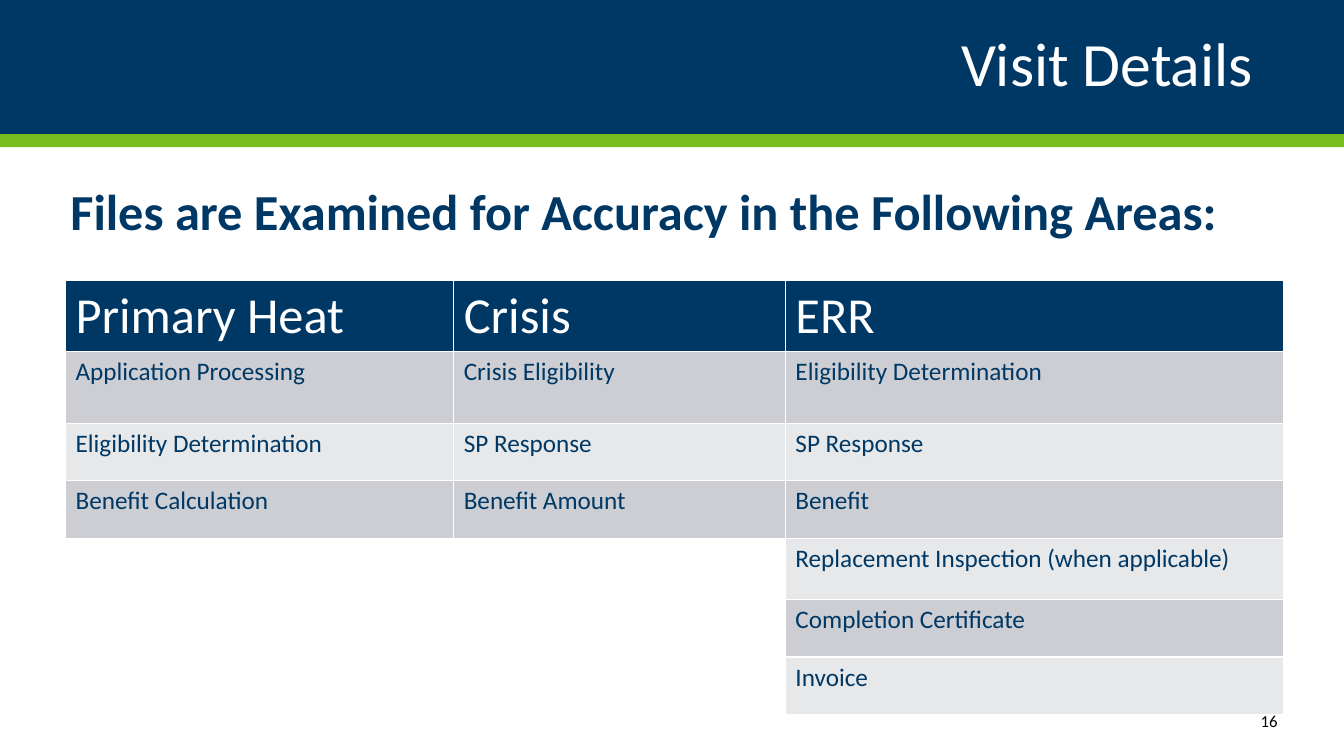
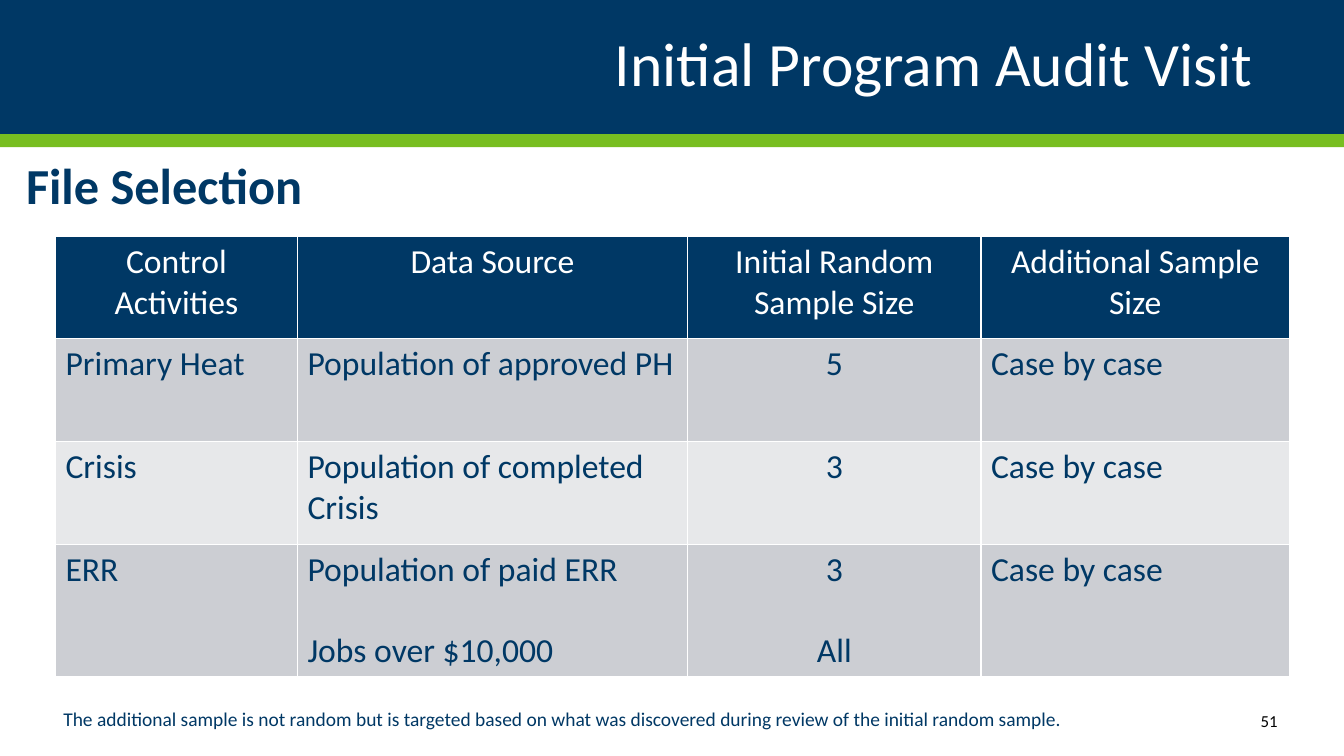
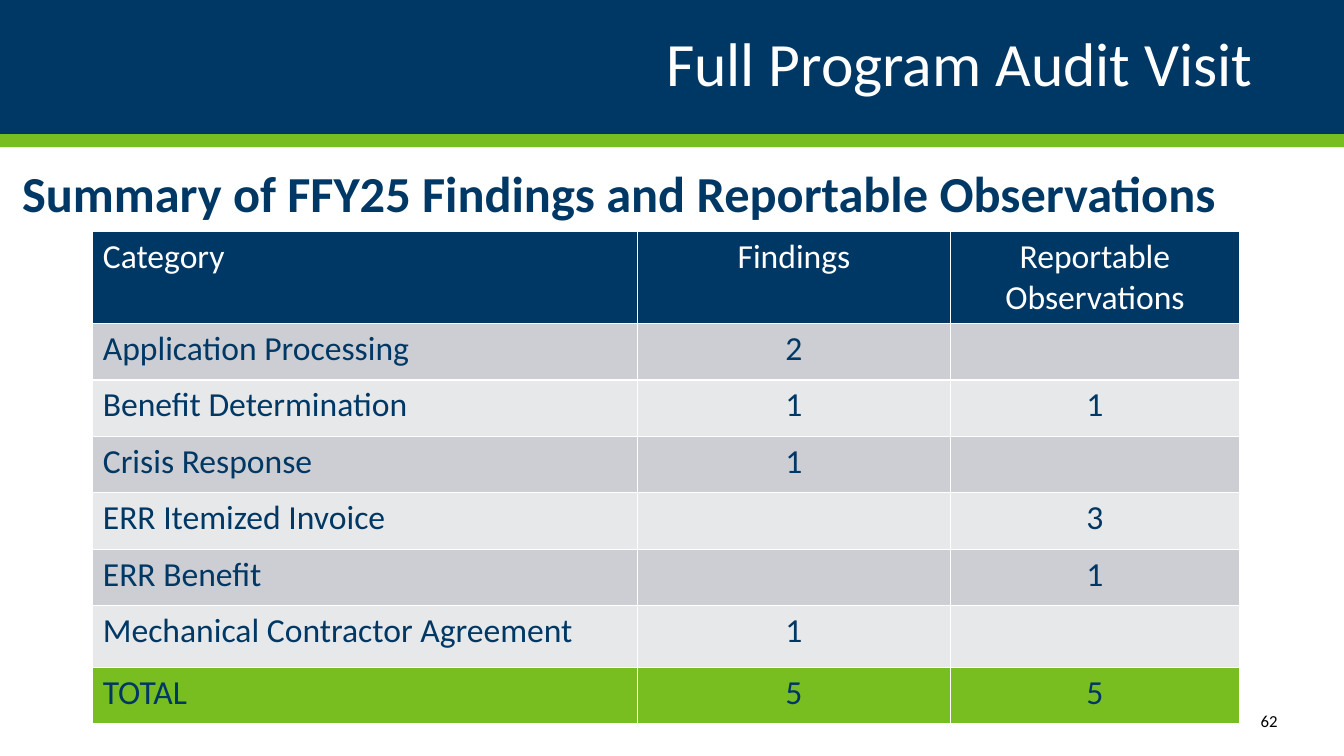
"""Build three audit-visit slides that share a title band, a heading, a page number and a table style."""
from dataclasses import dataclass
from typing import Optional

from lxml import etree
from pptx import Presentation
from pptx.dml.color import RGBColor
from pptx.enum import shapes, text
from pptx.oxml import ns
from pptx.util import Emu, Inches, Pt

Row = tuple[Optional[str], ...]


@dataclass(frozen=True)
class Theme:
    font: str = "Calibri"
    navy: str = "003865"
    green: str = "78BE21"
    white: str = "FFFFFF"
    black: str = "000000"
    bands: tuple[str, str] = ("CCCED3", "E7E8EA")
    title_size: int = 44
    heading_size: int = 36
    table_size: int = 24
    small_table_size: int = 18
    page_size: int = 12
    border: float = 1


THEME = Theme()
ALIGN = {"l": text.PP_ALIGN.LEFT, "c": text.PP_ALIGN.CENTER, "r": text.PP_ALIGN.RIGHT}


@dataclass(frozen=True)
class Area:
    left: float
    top: float
    width: float
    height: float

    def lengths(self) -> tuple[Emu, ...]:
        return tuple(Inches(v) for v in (self.left, self.top, self.width, self.height))


@dataclass(frozen=True)
class Grid:
    left: float
    top: float
    widths: tuple[float, ...]
    heights: tuple[float, ...]
    rows: tuple[Row, ...]
    header_align: str
    body_align: str
    header_size: int = THEME.table_size
    body_size: int = THEME.table_size
    has_total: bool = False

    def area(self) -> Area:
        return Area(self.left, self.top, sum(self.widths), sum(self.heights))


@dataclass(frozen=True)
class Page:
    title: str
    heading: str
    heading_area: Area
    number: int
    grid: Grid
    footnote: str = ""


TITLE_AREA = Area(0, 0, 13.33, 1.33)
STRIPE_AREA = Area(0, 1.33, 13.33, 0.13)
NUMBER_AREA = Area(11.17, 6.95, 1.6, 0.4)
FOOTNOTE_AREA = Area(0.53, 6.93, 11.86, 0.67)

PAGES = (
    Page(
        "Visit Details",
        "Files are Examined for Accuracy in the Following Areas:",
        Area(0.6, 1.74, 11.85, 5.01),
        16,
        Grid(
            0.65, 2.78, (3.85, 3.29, 4.94),
            (0.71, 0.71, 0.57, 0.57, 0.61, 0.57, 0.57),
            (
                ("Primary Heat", "Crisis", "ERR"),
                ("Application Processing", "Crisis Eligibility", "Eligibility Determination"),
                ("Eligibility Determination", "SP Response", "SP Response"),
                ("Benefit Calculation", "Benefit Amount", "Benefit"),
                (None, None, "Replacement Inspection (when applicable)"),
                (None, None, "Completion Certificate"),
                (None, None, "Invoice"),
            ),
            "lll", "lll", THEME.heading_size, THEME.small_table_size,
        ),
    ),
    Page(
        "Initial Program Audit Visit",
        "File Selection",
        Area(0.16, 1.48, 13.02, 5.28),
        51,
        Grid(
            0.55, 2.35, (2.4, 3.87, 2.91, 3.06), (1.01, 1.02, 1.02, 1.31),
            (
                ("Control Activities", "Data Source", "Initial Random Sample Size",
                 "Additional Sample Size"),
                ("Primary Heat", "Population of approved PH", "5", "Case by case"),
                ("Crisis", "Population of completed Crisis", "3", "Case by case"),
                ("ERR", "Population of paid ERR\nJobs over $10,000", "3\nAll", "Case by case"),
            ),
            "cccc", "llcl",
        ),
        "The additional sample is not random but is targeted based on what was "
        "discovered during review of the initial random sample.",
    ),
    Page(
        "Full Program Audit Visit",
        "Summary of FFY25 Findings and Reportable Observations",
        Area(0.12, 1.56, 13.11, 5.39),
        62,
        Grid(
            0.92, 2.3, (5.4, 3.11, 2.86),
            (0.91, 0.56, 0.56, 0.56, 0.56, 0.56, 0.61, 0.56),
            (
                ("Category", "Findings", "Reportable Observations"),
                ("Application Processing", "2", ""),
                ("Benefit Determination", "1", "1"),
                ("Crisis Response", "1", ""),
                ("ERR Itemized Invoice", "", "3"),
                ("ERR Benefit", "", "1"),
                ("Mechanical Contractor Agreement", "1", ""),
                ("TOTAL", "5", "5"),
            ),
            "lcc", "lcc", has_total=True,
        ),
    ),
)


def set_fill(item, colour: str) -> None:
    item.fill.solid()
    item.fill.fore_color.rgb = RGBColor.from_string(colour)


def write(frame, words: str, size: int, colour: str, align: str = "l", bold: bool = False) -> None:
    frame.text = words
    for para in frame.paragraphs:
        para.alignment = ALIGN[align]
        for span in para.runs:
            span.font.name = THEME.font
            span.font.size = Pt(size)
            span.font.bold = bold
            span.font.color.rgb = RGBColor.from_string(colour)


def add_text(slide, area: Area, words: str, size: int, colour: str,
             align: str = "l", bold: bool = False):
    box = slide.shapes.add_textbox(*area.lengths())
    box.text_frame.word_wrap = True
    write(box.text_frame, words, size, colour, align, bold)
    return box


def add_stripe(slide) -> None:
    stripe = slide.shapes.add_shape(shapes.MSO_SHAPE.RECTANGLE, *STRIPE_AREA.lengths())
    stripe.shadow.inherit = False
    set_fill(stripe, THEME.green)
    stripe.line.fill.background()


def set_title(slide, words: str) -> None:
    title = slide.shapes.title
    title.left, title.top, title.width, title.height = TITLE_AREA.lengths()
    set_fill(title, THEME.navy)
    frame = title.text_frame
    frame.auto_size = text.MSO_AUTO_SIZE.NONE
    frame.vertical_anchor = text.MSO_ANCHOR.MIDDLE
    frame.margin_left = frame.margin_right = Inches(0.9)
    write(frame, words, THEME.title_size, THEME.white, "r")
    frame.paragraphs[0].line_spacing = 0.9


def set_borders(cell) -> None:
    properties = cell._tc.get_or_add_tcPr()
    for position, edge in enumerate(("a:lnL", "a:lnR", "a:lnT", "a:lnB")):
        line = etree.Element(ns.qn(edge), w=str(Pt(THEME.border)))
        paint = etree.SubElement(line, ns.qn("a:solidFill"))
        etree.SubElement(paint, ns.qn("a:srgbClr"), val=THEME.white)
        properties.insert(position, line)


def row_fill(grid: Grid, row: int) -> str:
    if row == 0:
        return THEME.navy
    if grid.has_total and row == len(grid.rows) - 1:
        return THEME.green
    return THEME.bands[(row - 1) % 2]


def add_grid(slide, grid: Grid) -> None:
    table = slide.shapes.add_table(
        len(grid.rows), len(grid.widths), *grid.area().lengths()).table
    table.first_row = table.horz_banding = False
    for column, width in zip(table.columns, grid.widths):
        column.width = Inches(width)
    for index, (row, height) in enumerate(zip(table.rows, grid.heights)):
        row.height = Inches(height)
        header = index == 0
        size = grid.header_size if header else grid.body_size
        colour = THEME.white if header else THEME.navy
        aligns = grid.header_align if header else grid.body_align
        for cell, words, align in zip(row.cells, grid.rows[index], aligns):
            if words is None:
                cell.fill.background()
            else:
                set_fill(cell, row_fill(grid, index))
                write(cell.text_frame, words, size, colour, align)
                for para in cell.text_frame.paragraphs[1:]:
                    para.space_before = Pt(29)
            set_borders(cell)


def add_footnote(slide, words: str) -> None:
    box = add_text(slide, FOOTNOTE_AREA, words, THEME.table_size, THEME.navy)
    for span in box.text_frame.paragraphs[0].runs:
        span._r.get_or_add_rPr().set("baseline", "30000")


def add_page(deck, page: Page) -> None:
    slide = deck.slides.add_slide(deck.slide_layouts[5])
    add_stripe(slide)
    set_title(slide, page.title)
    heading = add_text(slide, page.heading_area, page.heading,
                       THEME.heading_size, THEME.navy, bold=True)
    set_fill(heading, THEME.white)
    number = add_text(slide, NUMBER_AREA, str(page.number), THEME.page_size, THEME.black, "r")
    number.text_frame.vertical_anchor = text.MSO_ANCHOR.MIDDLE
    add_grid(slide, page.grid)
    if page.footnote:
        add_footnote(slide, page.footnote)


def main() -> None:
    deck = Presentation()
    deck.slide_width, deck.slide_height = Inches(13.33), Inches(7.5)
    for page in PAGES:
        add_page(deck, page)
    deck.save("out.pptx")


if __name__ == "__main__":
    main()
